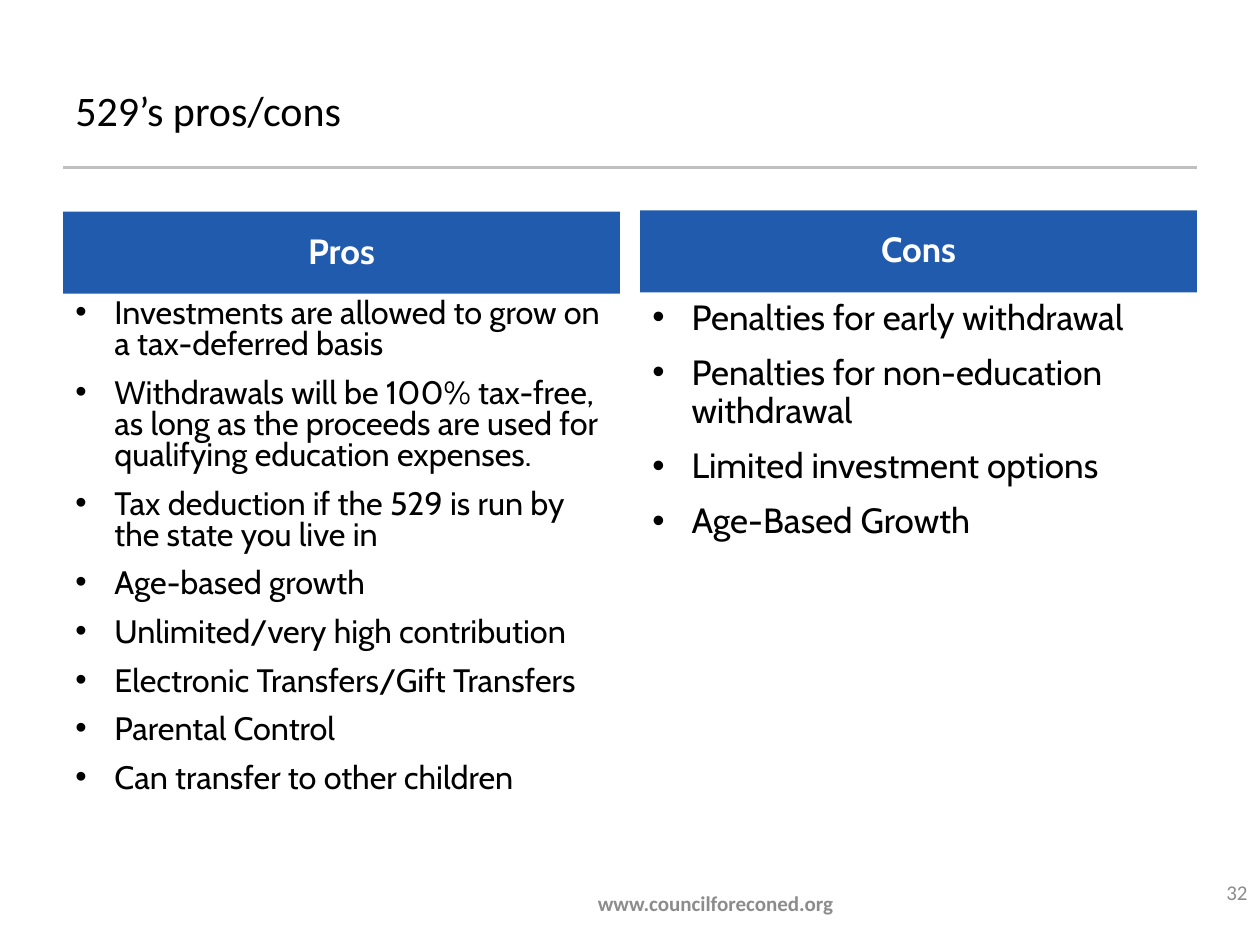
from lxml.etree import SubElement
from pptx import Presentation
from pptx.dml.color import RGBColor
from pptx.enum.shapes import MSO_CONNECTOR, MSO_SHAPE
from pptx.enum.text import MSO_ANCHOR, PP_ALIGN
from pptx.oxml.ns import qn
from pptx.util import Inches, Pt

TITLE = "529’s pros/cons"
FOOTER = "www.councilforeconed.org"
PAGE_NUMBER = "32"
COLUMNS = [
    {
        "heading": "Pros", "left": 0.5, "top": 1.68, "size": 18.5, "spacing": 0.8,
        "points": [
            "Investments are allowed to grow on a tax-deferred basis",
            "Withdrawals will be 100% tax-free, as long as the proceeds are used for "
            "qualifying education expenses.",
            "Tax deduction if the 529 is run by the state you live in",
            "Age-based growth",
            "Unlimited/very high contribution",
            "Electronic Transfers/Gift Transfers",
            "Parental Control",
            "Can transfer to other children",
        ],
    },
    {
        "heading": "Cons", "left": 5.08, "top": 1.67, "size": 20, "spacing": 0.9,
        "points": [
            "Penalties for early withdrawal",
            "Penalties for non-education withdrawal",
            "Limited investment options",
            "Age-Based Growth",
        ],
    },
]
COLUMN_WIDTH, HEADING_HEIGHT = 4.42, 0.65
LIST_TOP, LIST_HEIGHT, INDENT = 2.33, 4.32, 0.31
BLACK, WHITE, BLUE, GREY, RULE = "000000", "FFFFFF", "215BAE", "8C8C8C", "C0C0C0"


def rgb(color):
    return RGBColor.from_string(color)


def style(p, font, size, color, bold=False, align=PP_ALIGN.LEFT, spacing=1.0):
    p.alignment = align
    p.line_spacing = spacing
    for r in p.runs:
        r.font.name, r.font.size, r.font.bold = font, Pt(size), bold
        r.font.color.rgb = rgb(color)


def add_text(slide, box, lines, anchor=MSO_ANCHOR.TOP):
    tf = slide.shapes.add_textbox(*map(Inches, box)).text_frame
    tf.word_wrap = True
    tf.vertical_anchor = anchor
    tf.text = "\n".join(lines)
    return tf.paragraphs


def add_bullet(p):
    pPr = p._p.get_or_add_pPr()
    pPr.set("marL", str(Inches(INDENT)))
    pPr.set("indent", str(-Inches(INDENT)))
    SubElement(pPr, qn("a:buFont")).set("typeface", "Arial")
    SubElement(pPr, qn("a:buChar")).set("char", "•")


def add_column(slide, column):
    left = column["left"]
    s = slide.shapes.add_shape(MSO_SHAPE.RECTANGLE, *map(
        Inches, (left, column["top"], COLUMN_WIDTH, HEADING_HEIGHT)))
    s.shadow.inherit = False
    s.fill.solid()
    s.fill.fore_color.rgb = rgb(BLUE)
    s.line.fill.background()
    tf = s.text_frame
    tf.text = column["heading"]
    tf.vertical_anchor = MSO_ANCHOR.MIDDLE
    style(tf.paragraphs[0], "Cabin", 20, WHITE, True, PP_ALIGN.CENTER, 0.9)

    box = (left, LIST_TOP, COLUMN_WIDTH, LIST_HEIGHT)
    for i, p in enumerate(add_text(slide, box, column["points"])):
        add_bullet(p)
        style(p, "Cabin", column["size"], BLACK, spacing=column["spacing"])
        if i:
            p.space_before = Pt(10)


def main():
    prs = Presentation()
    prs.slide_width, prs.slide_height = Inches(10), Inches(7.5)
    slide = prs.slides.add_slide(prs.slide_layouts[6])

    rule = slide.shapes.add_connector(
        MSO_CONNECTOR.STRAIGHT, *map(Inches, (0.5, 1.33, 9.5, 1.33)))
    rule.line.color.rgb = rgb(RULE)
    rule.line.width = Pt(1.25)
    SubElement(rule._element.spPr, qn("a:effectLst"))

    for column in COLUMNS:
        add_column(slide, column)

    p = add_text(slide, (0.5, 0.67, 9, 0.67), [TITLE])[0]
    style(p, "Calibri", 24, BLACK, spacing=0.9)
    p = add_text(slide, (9.33, 6.83, 0.67, 0.5), [PAGE_NUMBER], MSO_ANCHOR.MIDDLE)[0]
    style(p, "Calibri", 12, GREY, align=PP_ALIGN.RIGHT)
    p = add_text(slide, (1.36, 6.92, 8.64, 0.5), [FOOTER], MSO_ANCHOR.MIDDLE)[0]
    style(p, "Calibri", 12, GREY, True, PP_ALIGN.CENTER)

    prs.save("out.pptx")


if __name__ == "__main__":
    main()
